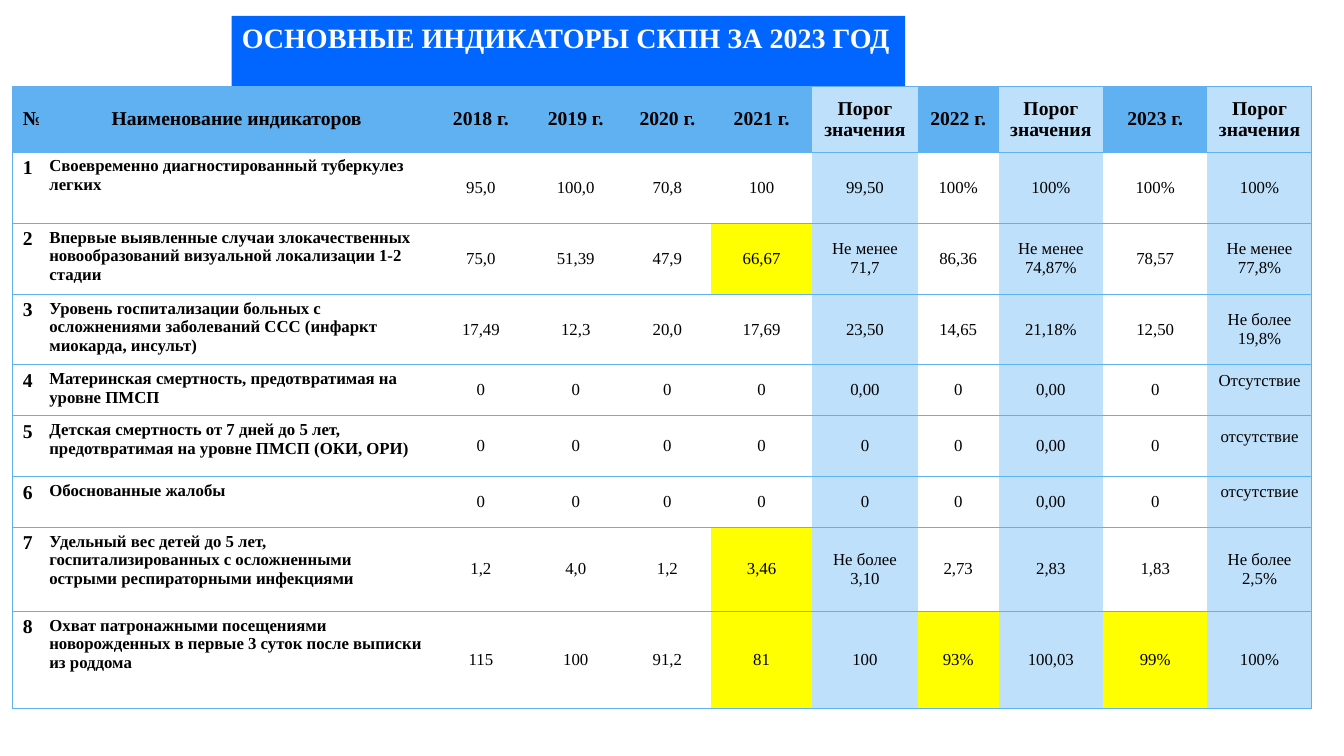
"""Build the slide with the table of the main indicators for 2023."""
import lxml.etree
import pptx
import pptx.dml.color
import pptx.enum.text
import pptx.oxml.ns
import pptx.util

Cm, Pt = pptx.util.Cm, pptx.util.Pt
ALIGN, ANCHOR = pptx.enum.text.PP_ALIGN, pptx.enum.text.MSO_ANCHOR
FONT = "Times New Roman"
BLUE, PALE, YELLOW, WHITE, BLACK = "60B1F2", "BFE0FA", "FFFF00", "FFFFFF", "000000"


def paint(target, color):
    if hasattr(target, "solid"):
        target.solid()
        target = target.fore_color
    target.rgb = pptx.dml.color.RGBColor.from_string(color)


def write(frame, text, size, bold, color, alignment):
    frame.text = text
    for paragraph in frame.paragraphs:
        paragraph.alignment = alignment
        font = paragraph.runs[0].font
        for name, value in {"name": FONT, "size": Pt(size), "bold": bold}.items():
            setattr(font, name, value)
        paint(font.color, color)


THRESHOLD = "Порог\nзначения"
ROWS = [
    ["№", "Наименование индикаторов", "2018 г.", "2019 г.", "2020 г.", "2021 г.",
     THRESHOLD, "2022 г.", THRESHOLD, "2023 г.", THRESHOLD],
    ["1", "Своевременно диагностированный туберкулез легких",
     "95,0", "100,0", "70,8", "100", "99,50", "100%", "100%", "100%", "100%"],
    ["2", "Впервые выявленные случаи злокачественных новообразований визуальной локализации 1-2 стадии",
     "75,0", "51,39", "47,9", "66,67", "Не менее 71,7", "86,36", "Не менее 74,87%", "78,57",
     "Не менее 77,8%"],
    ["3", "Уровень госпитализации больных с осложнениями заболеваний ССС (инфаркт миокарда, инсульт)",
     "17,49", "12,3", "20,0", "17,69", "23,50", "14,65", "21,18%", "12,50", "Не более 19,8%"],
    ["4", "Материнская смертность, предотвратимая на уровне ПМСП",
     "0", "0", "0", "0", "0,00", "0", "0,00", "0", "Отсутствие"],
    ["5", "Детская смертность от 7 дней до 5 лет, предотвратимая на уровне ПМСП (ОКИ, ОРИ)",
     "0", "0", "0", "0", "0", "0", "0,00", "0", "отсутствие"],
    ["6", "Обоснованные жалобы",
     "0", "0", "0", "0", "0", "0", "0,00", "0", "отсутствие"],
    ["7", "Удельный вес детей до 5 лет, госпитализированных с осложненными острыми респираторными инфекциями",
     "1,2", "4,0", "1,2", "3,46", "Не более 3,10", "2,73", "2,83", "1,83", "Не более 2,5%"],
    ["8", "Охват патронажными посещениями новорожденных в первые 3 суток после выписки из роддома",
     "115", "100", "91,2", "81", "100", "93%", "100,03", "99%", "100%"],
]
COLUMN_WIDTHS = [0.67, 9.95, 2.36, 2.42, 2.2, 2.55, 2.66, 2.04, 2.63, 2.63, 2.63]
ROW_HEIGHTS = [1.65, 1.79, 1.79, 1.78, 1.28, 1.54, 1.27, 2.12, 2.45]
THRESHOLD_COLUMNS = {6, 8, 10}
MISSED_TARGETS = {(2, 5), (7, 5), (8, 5), (8, 7), (8, 9)}

presentation = pptx.Presentation()
presentation.slide_width, presentation.slide_height = Cm(33.87), Cm(19.05)
slide = presentation.slides.add_slide(presentation.slide_layouts[5])

title = slide.shapes.title
title_box = {"left": Cm(5.84), "top": Cm(0.4), "width": Cm(16.97), "height": Cm(1.11)}
for name, value in title_box.items():
    setattr(title, name, value)
paint(title.fill, "0066FF")
write(title.text_frame, "ОСНОВНЫЕ ИНДИКАТОРЫ СКПН ЗА 2023 ГОД", 20, True, WHITE, ALIGN.LEFT)
title_frame = {"word_wrap": False, "vertical_anchor": ANCHOR.TOP,
               "auto_size": pptx.enum.text.MSO_AUTO_SIZE.SHAPE_TO_FIT_TEXT}
for name, value in title_frame.items():
    setattr(title.text_frame, name, value)

table = slide.shapes.add_table(
    len(ROWS), len(COLUMN_WIDTHS), Cm(0.32), Cm(2.18),
    Cm(sum(COLUMN_WIDTHS)), Cm(sum(ROW_HEIGHTS))).table
table.first_row = table.horz_banding = False
for column, width in zip(table.columns, COLUMN_WIDTHS):
    column.width = Cm(width)
for row, height in zip(table.rows, ROW_HEIGHTS):
    row.height = Cm(height)

last_column = len(COLUMN_WIDTHS) - 1
for row_index, texts in enumerate(ROWS):
    for column_index, text in enumerate(texts):
        cell = table.cell(row_index, column_index)
        header = row_index == 0
        label = column_index < 2
        write(cell.text_frame, text, 14 if header or column_index == 0 else 12,
              header or label, BLACK,
              ALIGN.LEFT if column_index == 1 and not header else ALIGN.CENTER)
        cell.vertical_anchor = ANCHOR.TOP if label and not header else ANCHOR.MIDDLE
        if text.lower() == "отсутствие":
            cell.margin_bottom = Cm(0.61)

        properties = cell._tc.get_or_add_tcPr()
        sides = {"L": column_index == 0, "R": column_index == last_column, "T": True, "B": True}
        for side, visible in sides.items():
            line = lxml.etree.SubElement(
                properties, pptx.oxml.ns.qn(f"a:ln{side}"), w=str(Pt(0.75)))
            if visible:
                fill = lxml.etree.SubElement(line, pptx.oxml.ns.qn("a:solidFill"))
                lxml.etree.SubElement(fill, pptx.oxml.ns.qn("a:srgbClr"), val=BLUE)
            else:
                lxml.etree.SubElement(line, pptx.oxml.ns.qn("a:noFill"))

        if (row_index, column_index) in MISSED_TARGETS:
            color = YELLOW
        elif column_index in THRESHOLD_COLUMNS:
            color = PALE
        else:
            color = BLUE if header else WHITE
        paint(cell.fill, color)

presentation.save("out.pptx")
